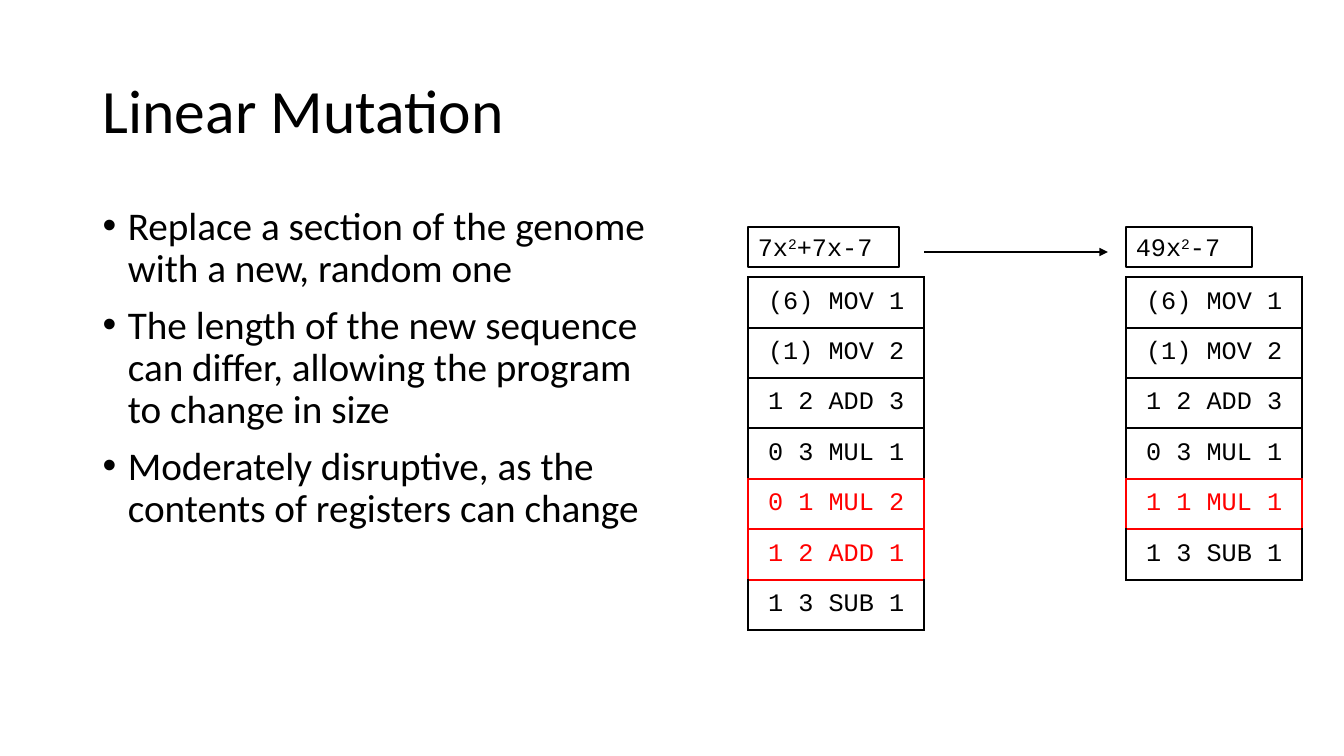
"""Builds the Linear Mutation slide with two program listings."""
from lxml.etree import SubElement
from pptx import Presentation
from pptx.dml.color import RGBColor
from pptx.enum.shapes import MSO_CONNECTOR as Connector, MSO_SHAPE as Shape
from pptx.enum.text import MSO_ANCHOR as Anchor, PP_ALIGN as Align
from pptx.oxml import parse_xml
from pptx.oxml.ns import nsdecls, qn
from pptx.util import Pt

TITLE = "Linear Mutation"
POINTS = [
    "Replace a section of the genome with a new, random one",
    "The length of the new sequence can differ, allowing the program to change in size",
    "Moderately disruptive, as the contents of registers can change",
]
SHARED_START = ["(6) MOV 1", "(1) MOV 2", "1 2 ADD 3", "0 3 MUL 1"]
SHARED_END = ["1 3 SUB 1"]
PROGRAMS = [
    {"left": 742, "formula": ["7x", "2", "+7x-7"], "formula_width": 150,
     "mutated": ["0 1 MUL 2", "1 2 ADD 1"]},
    {"left": 1117, "formula": ["49x", "2", "-7"], "formula_width": 125,
     "mutated": ["1 1 MUL 1"]},
]
COLORS = {"ink": "000000", "mutated": "FF0000"}
PROSE, CODE = "Calibri", "Courier New"
PX = 9144
LINE = Pt(1.5)
FORMULA_TOP, FORMULA_HEIGHT = 225, 40
LISTING_TOP, LISTING_WIDTH, ROW_HEIGHT = 275, 175, 50
ARROW_Y, ARROW_END = 250, 1099


def px(*lengths):
    return [length * PX for length in lengths]


def rgb(name):
    return RGBColor.from_string(COLORS[name])


def write(frame, paragraphs, size=18, font=CODE, color="ink", align=Align.LEFT,
          spacing=1.0, before=0, bullet=False):
    frame.word_wrap = True
    for number, runs in enumerate(paragraphs):
        paragraph = frame.paragraphs[0] if number == 0 else frame.add_paragraph()
        paragraph.alignment = align
        paragraph.line_spacing = spacing
        paragraph.space_before = Pt(before)
        if bullet:
            properties = paragraph._p.get_or_add_pPr()
            properties.set("marL", str(25 * PX))
            properties.set("indent", str(-25 * PX))
            SubElement(properties, qn("a:buFont"), typeface="Arial")
            SubElement(properties, qn("a:buChar"), char="•")
        for position, text in enumerate(runs):
            run = paragraph.add_run()
            run.text = text
            run.font.size = Pt(size)
            run.font.name = font
            run.font.color.rgb = rgb(color)
            if position % 2:
                run._r.get_or_add_rPr().set("baseline", "30000")


def add_text(slide, box, paragraphs, anchor=Anchor.TOP, **style):
    frame = slide.shapes.add_textbox(*px(*box)).text_frame
    frame.vertical_anchor = anchor
    write(frame, paragraphs, font=PROSE, spacing=0.9, **style)


def set_borders(cell, sides):
    properties = cell._tc.get_or_add_tcPr()
    for place, (side, color) in enumerate(sides.items()):
        properties.insert(place, parse_xml(
            f'<a:ln{side} {nsdecls("a")} w="{LINE}"><a:solidFill>'
            f'<a:srgbClr val="{COLORS[color]}"/></a:solidFill></a:ln{side}>'))


def add_formula(slide, program):
    box = slide.shapes.add_shape(Shape.RECTANGLE, *px(
        program["left"], FORMULA_TOP, program["formula_width"], FORMULA_HEIGHT))
    box.shadow.inherit = False
    box.fill.background()
    box.line.color.rgb = rgb("ink")
    box.line.width = LINE
    box.text_frame.vertical_anchor = Anchor.TOP
    write(box.text_frame, [program["formula"]])


def add_listing(slide, program):
    mutated = program["mutated"]
    steps = SHARED_START + mutated + SHARED_END
    first = len(SHARED_START)
    colors = ["mutated" if first <= row < first + len(mutated) else "ink"
              for row in range(len(steps))]
    table = slide.shapes.add_table(len(steps), 1, *px(
        program["left"], LISTING_TOP, LISTING_WIDTH, ROW_HEIGHT * len(steps))).table
    table.first_row = table.horz_banding = False
    for row, (step, color) in enumerate(zip(steps, colors)):
        cell = table.cell(row, 0)
        cell.fill.background()
        cell.vertical_anchor = Anchor.MIDDLE
        write(cell.text_frame, [[step]], color=color, align=Align.CENTER)
        above, below = colors[max(row - 1, 0)], colors[min(row + 1, len(steps) - 1)]
        set_borders(cell, {
            "L": color, "R": color,
            "T": "mutated" if "mutated" in (color, above) else "ink",
            "B": "mutated" if "mutated" in (color, below) else "ink"})


def add_arrow(slide, start):
    arrow = slide.shapes.add_connector(
        Connector.STRAIGHT, *px(start, ARROW_Y, ARROW_END, ARROW_Y))
    arrow.line.color.rgb = rgb("ink")
    arrow.line.width = LINE
    SubElement(arrow.line._get_or_add_ln(), qn("a:tailEnd"), type="triangle")
    SubElement(arrow._element.spPr, qn("a:effectLst"))


def main():
    deck = Presentation()
    deck.slide_width, deck.slide_height = 12192000, 6858000
    slide = deck.slides.add_slide(deck.slide_layouts[6])
    add_text(slide, (92, 40, 1150, 145), [[TITLE]], anchor=Anchor.MIDDLE, size=44)
    add_text(slide, (92, 200, 567, 476), [[point] for point in POINTS],
             size=28, before=10, bullet=True)
    for program in PROGRAMS:
        add_listing(slide, program)
        add_formula(slide, program)
    add_arrow(slide, PROGRAMS[0]["left"] + LISTING_WIDTH)
    deck.save("out.pptx")


if __name__ == "__main__":
    main()
